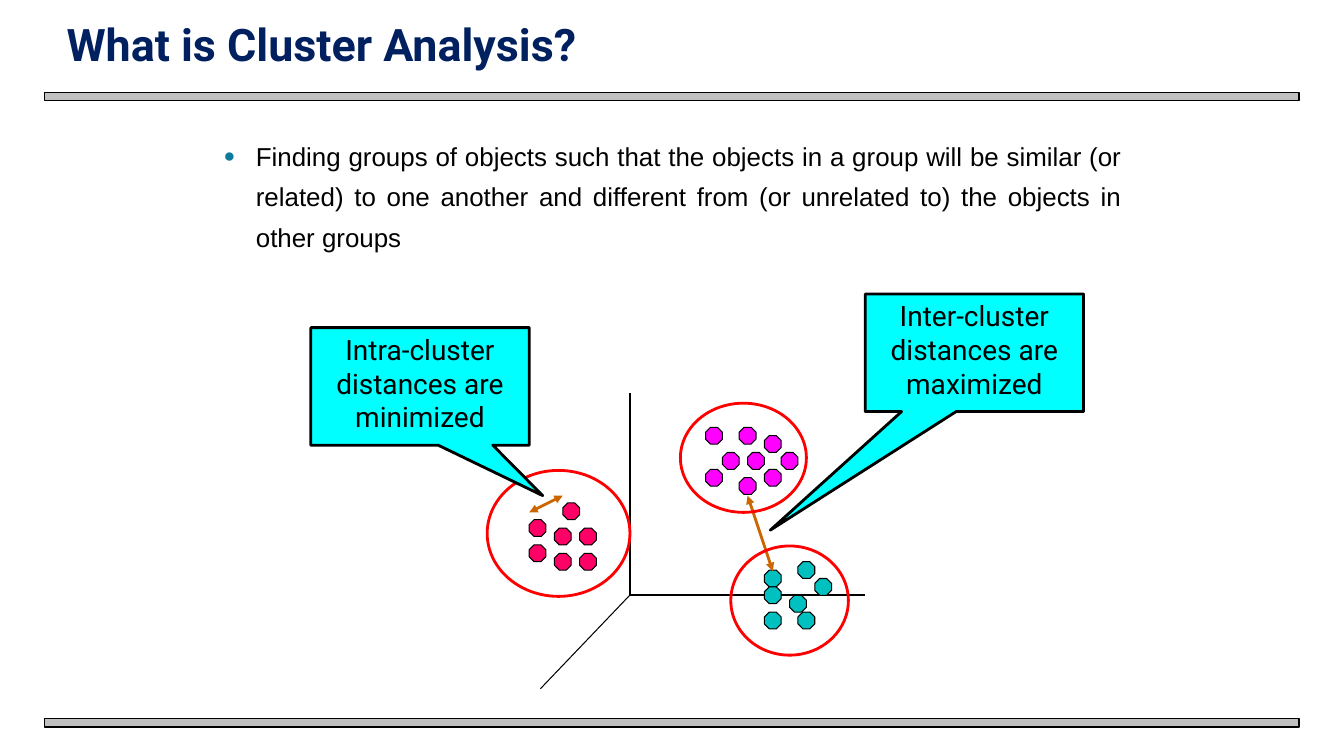
import pptx
import pptx.util
import pptx.dml.color
import pptx.enum.shapes
import pptx.enum.text
import pptx.oxml
import pptx.oxml.ns

Pt = pptx.util.Pt
RGB = pptx.dml.color.RGBColor
SHAPE = pptx.enum.shapes.MSO_SHAPE
ALIGN = pptx.enum.text.PP_ALIGN
ANCHOR = pptx.enum.text.MSO_ANCHOR

BLACK = RGB(0, 0, 0)
NAVY = RGB(0x00, 0x20, 0x60)
GRAY = RGB(0xC0, 0xC0, 0xC0)
CYAN = RGB(0x00, 0xFF, 0xFF)
RED = RGB(0xFF, 0x00, 0x00)
ORANGE = RGB(0xCC, 0x66, 0x00)
MAGENTA = RGB(0xFF, 0x00, 0xFF)
PINK = RGB(0xFF, 0x00, 0x66)
TEAL = RGB(0x00, 0xC0, 0xC0)

TITLE = "What is Cluster Analysis?"
BODY = ("Finding groups of objects such that the objects in a group will be similar "
        "(or related) to one another and different from (or unrelated to) the objects "
        "in other groups")
RULE_TOPS = [66.2, 513.4]
AXES = [(450, 281, 450, 425), (450, 425, 618, 425), (450, 425, 386, 492)]
GRID = 6
GRID_TOP = 305.2
CLUSTERS = [
    (MAGENTA, [(86, 3), (89, 3), (88, 0), (88, 6), (93, 3), (91, 1), (84, 0), (91, 5), (84, 5)]),
    (PINK, [(63, 11), (66, 12), (66, 15), (69, 12), (67, 9), (69, 15), (63, 14)]),
    (TEAL, [(91, 17), (97, 18), (94, 20), (91, 22), (95, 22), (91, 19), (95, 16)]),
]
RINGS = [(348, 336, 102, 90), (486, 288, 90, 78), (522, 390, 84, 78)]
INTER = ("Inter-cluster distances are maximized", 618, 210, (-0.935, 1.509))
INTRA = ("Intra-cluster distances are minimized", 222, 234, (0.562, 0.929))
INTER_ARROW = (552, 408, 534, 354)
INTRA_ARROW = (378, 366, 402, 354)

NS = pptx.oxml.ns.nsdecls("a")


def add_xml(parent, xml):
    parent.append(pptx.oxml.parse_xml(xml))


def add_run(p, text, font, size, color, bold=False):
    r = p.add_run()
    r.text = text
    r.font.name = font
    r.font.size = Pt(size)
    r.font.color.rgb = color
    r.font.bold = bold


def add_box(s, kind, box, fill, line, width):
    sp = s.shapes.add_shape(kind, *map(Pt, box))
    sp.shadow.inherit = False
    if fill is None:
        sp.fill.background()
    else:
        sp.fill.solid()
        sp.fill.fore_color.rgb = fill
    sp.line.color.rgb = line
    sp.line.width = Pt(width)
    return sp


def add_line(s, ends, color, width, arrows=False):
    cx = s.shapes.add_connector(pptx.enum.shapes.MSO_CONNECTOR.STRAIGHT, *map(Pt, ends))
    cx.line.color.rgb = color
    cx.line.width = Pt(width)
    if arrows:
        for end in ("headEnd", "tailEnd"):
            add_xml(cx.line._get_or_add_ln(), f'<a:{end} {NS} type="triangle"/>')
    add_xml(cx._element.spPr, f"<a:effectLst {NS}/>")


def add_callout(s, text, left, top, tip):
    sp = add_box(s, SHAPE.RECTANGULAR_CALLOUT, (left, top, 156, 84), CYAN, BLACK, 2)
    sp.adjustments[0], sp.adjustments[1] = tip
    tf = sp.text_frame
    tf.word_wrap = True
    tf.vertical_anchor = ANCHOR.TOP
    p = tf.paragraphs[0]
    p.alignment = ALIGN.CENTER
    add_run(p, text, "Roboto", 20, BLACK)


def fill_placeholder(sp, box, anchor, align):
    sp.left, sp.top, sp.width, sp.height = map(Pt, box)
    tf = sp.text_frame
    tf.word_wrap = True
    tf.auto_size = pptx.enum.text.MSO_AUTO_SIZE.NONE
    tf.vertical_anchor = anchor
    p = tf.paragraphs[0]
    p.alignment = align
    return p


def main():
    prs = pptx.Presentation()
    prs.slide_width, prs.slide_height = Pt(960), Pt(540)
    s = prs.slides.add_slide(prs.slide_layouts[1])

    for top in RULE_TOPS:
        add_box(s, SHAPE.RECTANGLE, (32, top, 896, 5.8), GRAY, BLACK, 1)

    p = fill_placeholder(s.shapes.title, (40.3, 12.2, 869, 41.8), ANCHOR.BOTTOM, ALIGN.LEFT)
    p.line_spacing = Pt(36)
    add_run(p, TITLE, "Roboto", 32, NAVY, True)

    p = fill_placeholder(s.placeholders[1], (152.6, 90, 655.2, 102.2), ANCHOR.TOP, ALIGN.JUSTIFY)
    p.line_spacing = 1.3
    p.space_before, p.space_after = Pt(2), Pt(4)
    pPr = p._p.get_or_add_pPr()
    pPr.set("marL", str(Pt(23)))
    pPr.set("indent", str(-Pt(23)))
    for bullet in ('buClr {}><a:srgbClr val="0C7B9C"/></a:buClr>', 'buSzPct {} val="75000"/>',
                   'buFont {} typeface="Arial"/>', 'buChar {} char="●"/>'):
        add_xml(pPr, "<a:" + bullet.format(NS))
    add_run(p, BODY, "Arial", 18.5, BLACK)

    for ends in AXES:
        add_line(s, ends, BLACK, 0.75)
    for color, points in CLUSTERS:
        for col, row in points:
            box = (col * GRID, GRID_TOP + row * GRID, 2 * GRID, 2 * GRID)
            add_box(s, SHAPE.OCTAGON, box, color, BLACK, 0.75)

    add_line(s, INTER_ARROW, ORANGE, 2, True)
    add_callout(s, *INTER)
    for ring in RINGS:
        add_box(s, SHAPE.OVAL, ring, None, RED, 2)
    add_line(s, INTRA_ARROW, ORANGE, 2, True)
    add_callout(s, *INTRA)

    prs.save("out.pptx")


if __name__ == "__main__":
    main()
